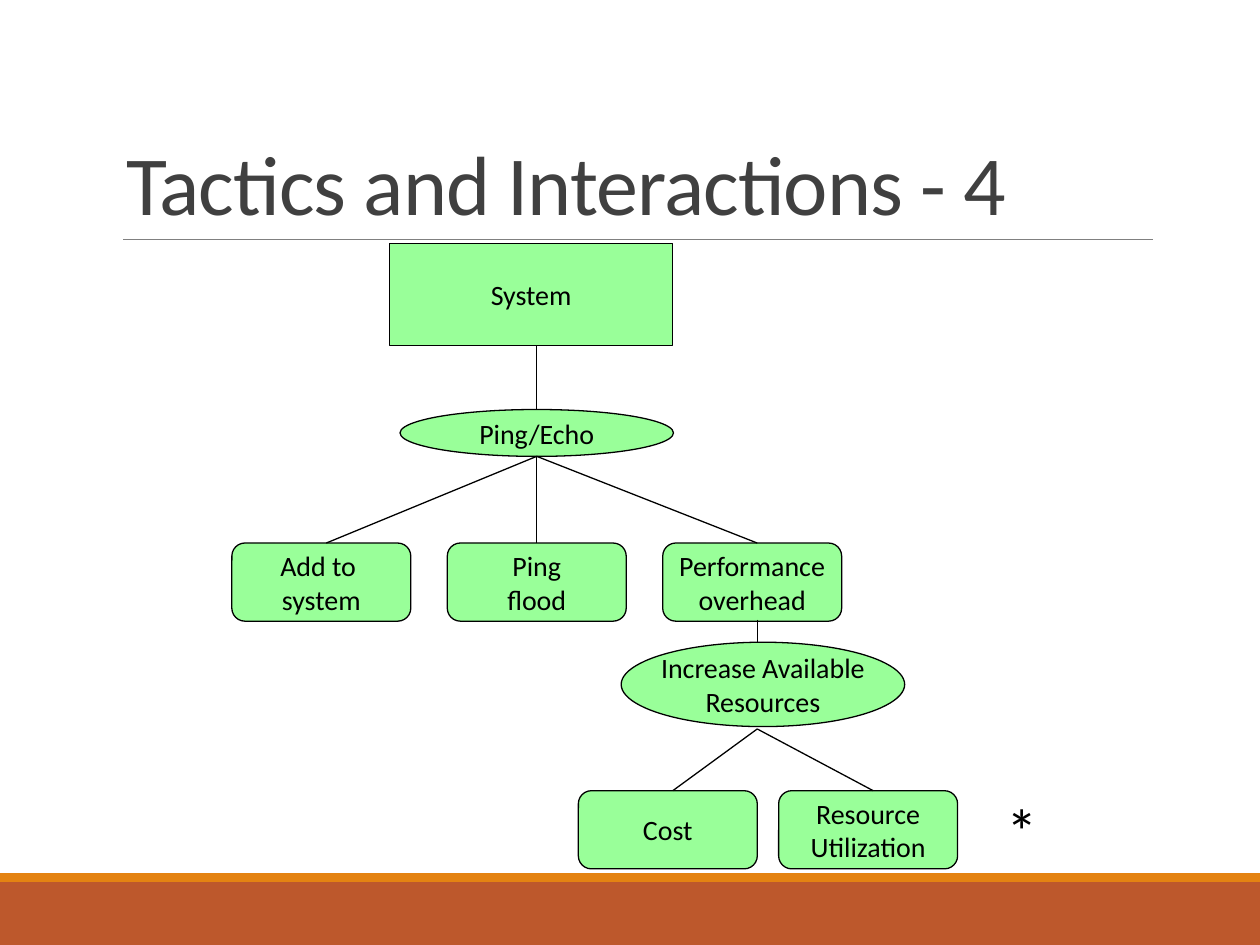
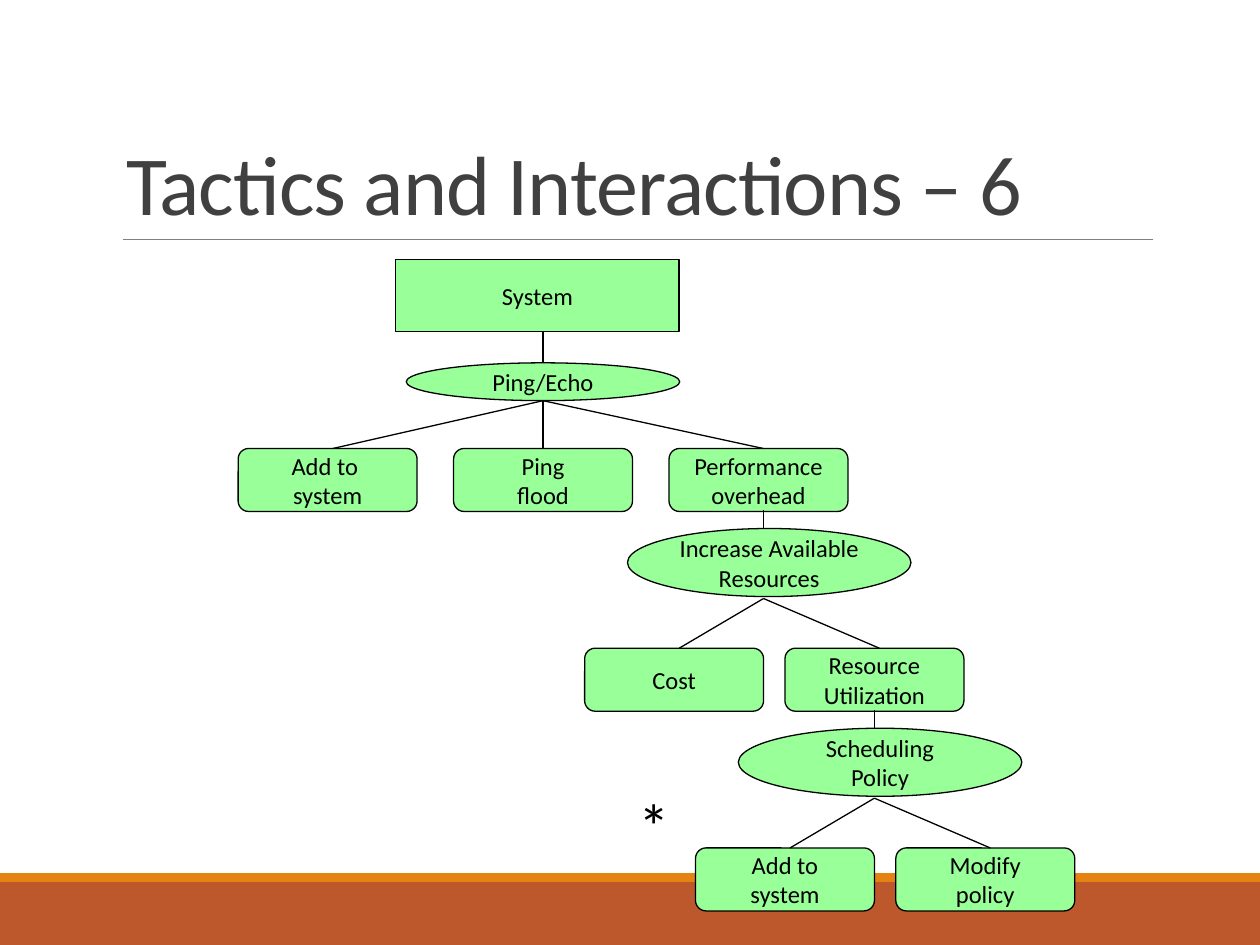
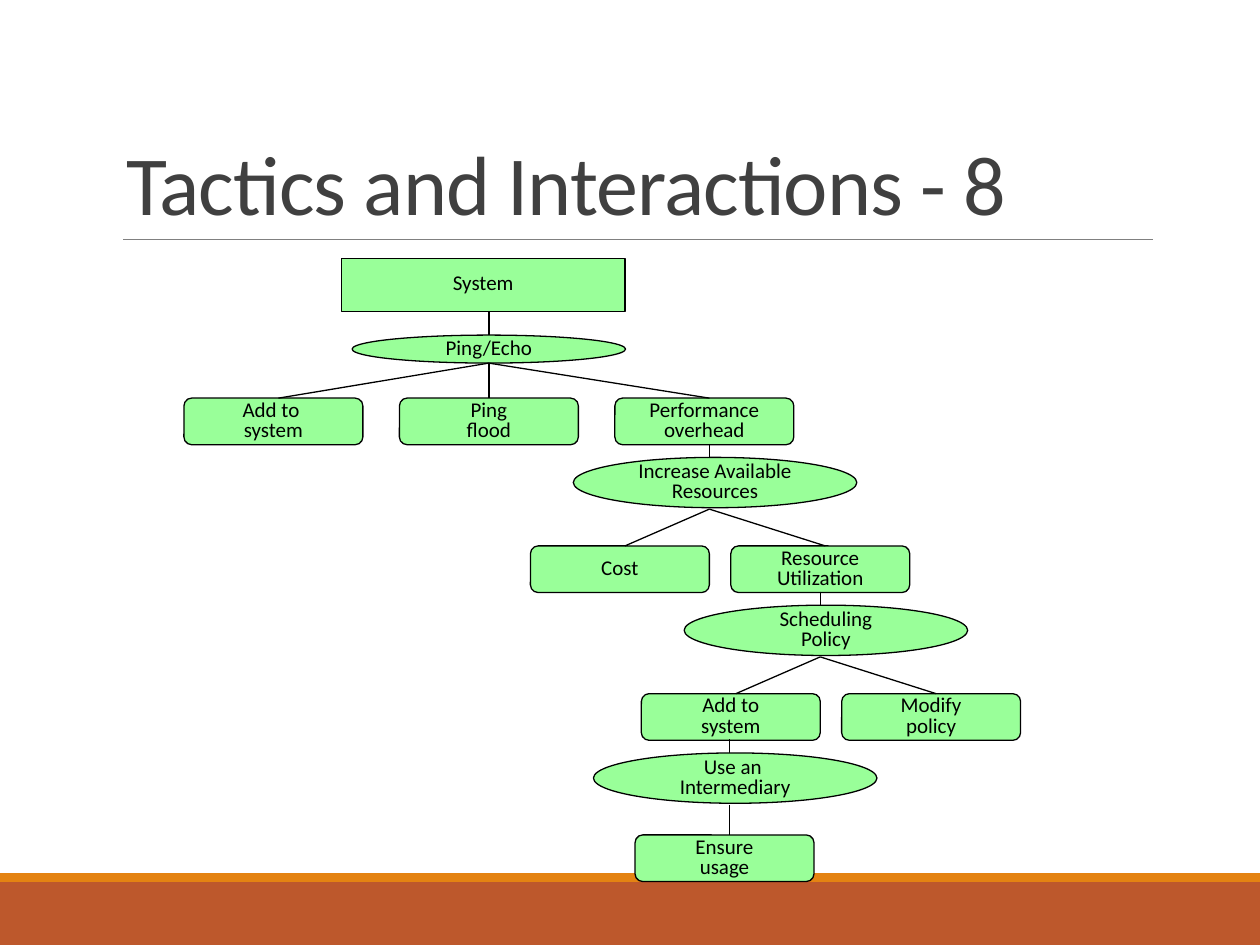
from pptx import Presentation
from pptx import util as u
from pptx.dml.color import RGBColor
from pptx.enum import shapes, text
from pptx.oxml.ns import qn
from lxml import etree

COLORS = {"band": "BD582C", "stripe": "E48312", "rule": "808080",
          "title": "404040", "node": "99FF99", "ink": "000000"}
FONT = "Calibri"
SHAPE = shapes.MSO_SHAPE

# Node sizes in inches; heights are shares of the slide's row height
BOX_W, WIDE_W, PING_W = 1.42, 2.25, 2.17
PING_H, ELLIPSE_H = 0.6, 1.08

# Rows below the top of a box: line down, its end, ellipse, fork, next boxes
STEM, STEM_END, ELLIPSE, FORK, LEVEL = 0.98, 1.77, 1.27, 2.38, 3.17
SINGLE_LEVEL = 3.03

# Children of a node: (left edge, line end) relative to the node's axis
TRIO = ((-2.42, -1.67), (-0.71, 0), (1.0, 1.75))
PAIR = ((-1.42, -0.67), (0.17, 0.92))
SINGLE = ((-0.75, 0),)

# Later levels: axis shift from the level above, ellipse text, child texts
RESOURCES = (1.75, "Increase Available\nResources",
             ["Cost", "Resource\nUtilization"])
SCHEDULING = (0.88, "Scheduling\nPolicy", ["Add to\nsystem", "Modify\npolicy"])
INTERMEDIARY = (-0.72, "Use an \nIntermediary", ["Ensure\nusage"])

# The deepest tree has the lowest rows, so its text is smaller
SLIDES = [
    dict(title="Tactics and Interactions - 4", axis=4.26, row=0.62, size=16,
         spacing=None, system=(1.93, 0.81), ping=3.25, boxes=4.31,
         levels=[RESOURCES], star=(7.89, 6.23)),
    dict(title="Tactics and Interactions – 6", axis=4.31, row=0.5, size=14,
         spacing=None, system=(2.06, 0.57), ping=2.88, boxes=3.56,
         levels=[RESOURCES, SCHEDULING], star=(4.97, 6.19)),
    dict(title="Tactics and Interactions - 8", axis=3.88, row=0.37, size=12,
         spacing=0.8, system=(2.05, 0.42), ping=2.66, boxes=3.16,
         levels=[RESOURCES, SCHEDULING, INTERMEDIARY], star=None),
]


def color(name):
    return RGBColor.from_string(COLORS[name])


def inches(*lengths):
    return [u.Inches(n) for n in lengths]


def add_run(p, words, size, ink="ink"):
    r = p.add_run()
    r.text = words
    r.font.name, r.font.size = FONT, u.Pt(size)
    r.font.color.rgb = color(ink)
    return r


def add_filled(parent, kind, at, fill):
    sp = parent.shapes.add_shape(kind, *inches(*at))
    sp.shadow.inherit = False
    sp.fill.solid()
    sp.fill.fore_color.rgb = color(fill)
    sp.line.fill.background()
    return sp


def add_line(parent, start, end, ink="ink", width=0.75):
    line = parent.shapes.add_connector(shapes.MSO_CONNECTOR.STRAIGHT,
                                       *inches(*start, *end))
    line.line.color.rgb = color(ink)
    line.line.width = u.Pt(width)
    etree.SubElement(line._element.spPr, qn("a:effectLst"))
    return line


def add_node(group, kind, at, words, style):
    """Green outlined shape with one centred paragraph per line of words."""
    sp = add_filled(group, kind, at, "node")
    sp.line.color.rgb = color("ink")
    sp.line.width = u.Pt(0.75)
    tf = sp.text_frame
    tf.word_wrap = False
    tf.vertical_anchor = text.MSO_ANCHOR.MIDDLE
    for i, part in enumerate(words.split("\n")):
        p = tf.add_paragraph() if i else tf.paragraphs[0]
        p.alignment = text.PP_ALIGN.CENTER
        if style["spacing"]:
            p.line_spacing = style["spacing"]
        add_run(p, part, style["size"])


def add_children(group, axis, fork, top, places, labels, style):
    """Boxes in a row, each joined to the fork above."""
    for (left, end), label in zip(places, labels):
        add_node(group, SHAPE.ROUNDED_RECTANGLE,
                 (axis + left, top, BOX_W, style["row"]), label, style)
        add_line(group, (axis, fork), (axis + end, top))


def add_tree(s, style):
    group = s.shapes.add_group_shape()
    axis, row, top = style["axis"], style["row"], style["boxes"]
    system_top, system_h = style["system"]
    ping, ping_h = style["ping"], PING_H * row

    # System, its tactic and the tactic's side effects
    add_node(group, SHAPE.RECTANGLE,
             (axis - 1.17, system_top, WIDE_W, system_h), "System", style)
    add_line(group, (axis, system_top + system_h), (axis, ping))
    add_node(group, SHAPE.OVAL, (axis - PING_W / 2, ping, PING_W, ping_h),
             "Ping/Echo", style)
    add_children(group, axis, ping + ping_h, top, TRIO,
                 ["Add to \nsystem", "Ping\nflood", "Performance\noverhead"],
                 style)

    # Each further tactic hangs below one box of the level above
    for shift, tactic, effects in style["levels"]:
        axis += shift
        add_line(group, (axis, top + STEM * row), (axis, top + STEM_END * row))
        add_node(group, SHAPE.OVAL,
                 (axis - 1.08, top + ELLIPSE * row, WIDE_W, ELLIPSE_H * row),
                 tactic, style)
        fork = top + FORK * row
        single = len(effects) == 1
        top += (SINGLE_LEVEL if single else LEVEL) * row
        add_children(group, axis, fork, top, SINGLE if single else PAIR,
                     effects, style)


def add_star(s, left, top):
    tf = s.shapes.add_textbox(*inches(left, top, 0.4, 0.71)).text_frame
    tf.word_wrap = False
    tf.auto_size = text.MSO_AUTO_SIZE.SHAPE_TO_FIT_TEXT
    add_run(tf.paragraphs[0], "*", 36)


def set_title(s, words):
    tf = s.shapes.title.text_frame
    tf.vertical_anchor = text.MSO_ANCHOR.BOTTOM
    p = tf.paragraphs[0]
    p.alignment = text.PP_ALIGN.LEFT
    p.line_spacing = 0.85
    add_run(p, words, 48, "title").font._element.set("spc", "-50")


def dress_layout(layout, s):
    """Place the title and move the shared bands and rule into the layout."""
    title = layout.placeholders[0]
    title.left, title.top, title.width, title.height = inches(
        0.9, 0.31, 8.25, 1.59)
    decor = [add_filled(s, SHAPE.RECTANGLE, (0, 7, 10, 0.5), "band"),
             add_filled(s, SHAPE.RECTANGLE, (0, 6.93, 10, 0.07), "stripe"),
             add_line(s, (0.98, 1.9), (9.15, 1.9), "rule", 0.5)]
    for i, sp in enumerate(decor):
        layout.shapes.element.insert(2 + i, sp._element)


def main():
    prs = Presentation()
    prs.slide_width, prs.slide_height = inches(10, 7.5)
    layout = prs.slide_layouts[5]
    for i, style in enumerate(SLIDES):
        s = prs.slides.add_slide(layout)
        if i == 0:
            dress_layout(layout, s)
        set_title(s, style["title"])
        add_tree(s, style)
        if style["star"]:
            add_star(s, *style["star"])
    prs.save("out.pptx")


if __name__ == "__main__":
    main()
